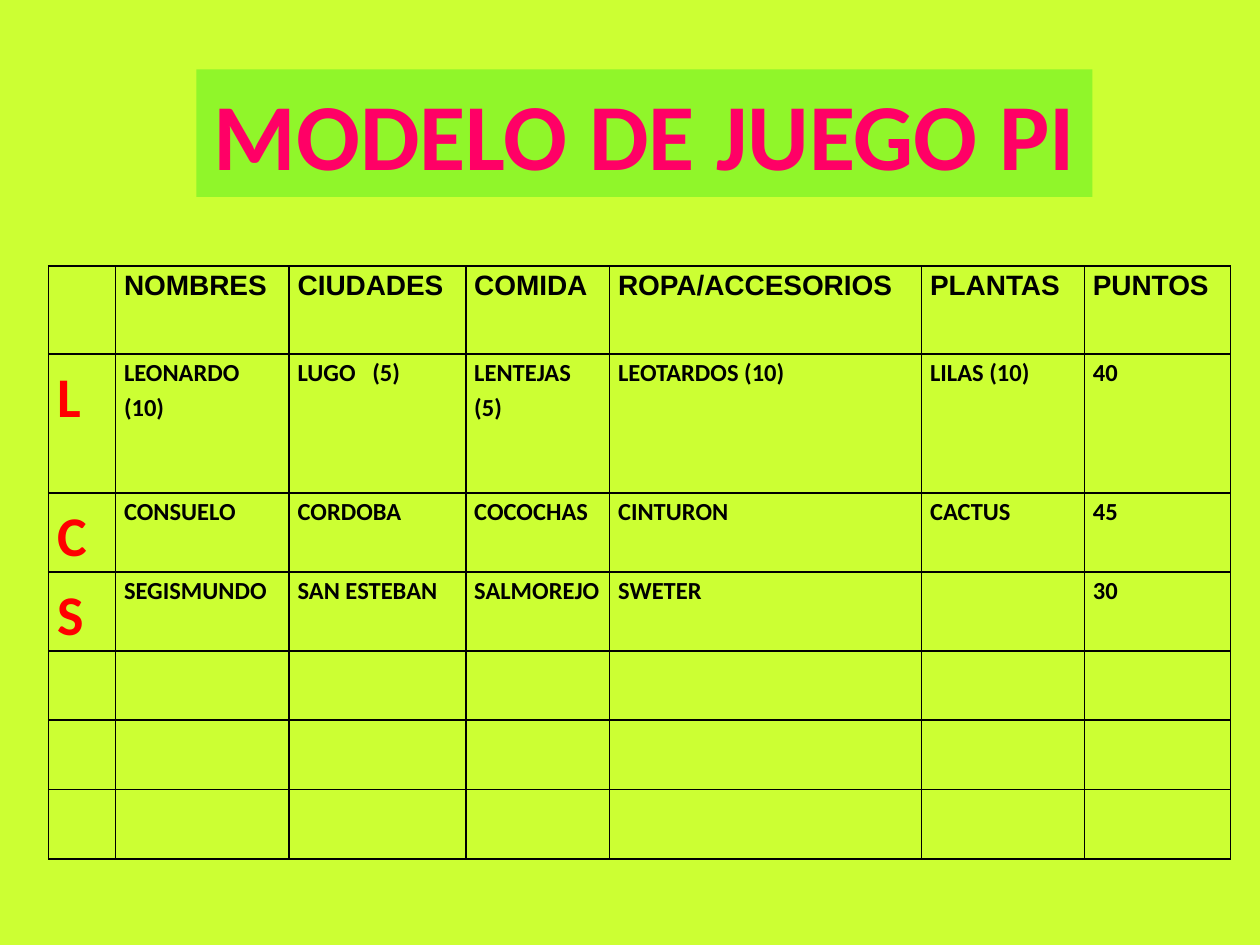
from pptx import Presentation
from pptx import util as u
from pptx.dml import color as colors
from pptx.enum import text
from pptx.oxml import parse_xml
from pptx.oxml.ns import nsdecls

LIME, GREEN, PINK, RED, BLACK = "CCFF33", "90F62A", "FF0066", "FF0000", "000000"

HEADINGS = ["", "NOMBRES", "CIUDADES", "COMIDA", "ROPA/ACCESORIOS", "PLANTAS", "PUNTOS"]
ROUNDS = [
    ["L", "LEONARDO (10)", "LUGO   (5)", "LENTEJAS (5)", "LEOTARDOS (10)", "LILAS (10)", "40"],
    ["C", "CONSUELO", "CORDOBA", "COCOCHAS", "CINTURON", "CACTUS", "45"],
    ["S", "SEGISMUNDO", "SAN ESTEBAN", "SALMOREJO", "SWETER", "", "30"],
]
BLANK_ROUNDS = [[""] * len(HEADINGS)] * 3
COLUMN_WIDTHS = [1.35, 3.5, 3.56, 2.9, 6.29, 3.28, 2.95]
ROW_HEIGHTS = [1.78, 2.8] + [1.59] * 2 + [1.4] * 3


def paint(color_format, color):
    color_format.rgb = colors.RGBColor.from_string(color)


def format_runs(paragraph, font, size, color):
    for run in paragraph.runs:
        run.font.name = font
        run.font.size = u.Pt(size)
        run.font.bold = True
        paint(run.font.color, color)


def add_borders(cell, color=BLACK, width=1):
    properties = cell._tc.get_or_add_tcPr()
    for index, side in enumerate("LRTB"):
        properties.insert(index, parse_xml(
            f'<a:ln{side} {nsdecls("a")} w="{u.Pt(width)}"><a:solidFill>'
            f'<a:srgbClr val="{color}"/></a:solidFill></a:ln{side}>'))


def place_title(slide, left, top, width, height):
    title = slide.shapes.title
    title.left, title.top, title.width, title.height = map(u.Cm, (left, top, width, height))
    title.fill.solid()
    paint(title.fill.fore_color, GREEN)
    frame = title.text_frame
    frame.text = "MODELO DE JUEGO PI"
    frame.word_wrap = False
    frame.auto_size = text.MSO_AUTO_SIZE.SHAPE_TO_FIT_TEXT
    frame.paragraphs[0].alignment = text.PP_ALIGN.CENTER
    format_runs(frame.paragraphs[0], "Calibri", 54, PINK)


def fill_cell(cell, content, font, size, color):
    cell.fill.background()
    add_borders(cell)
    cell.margin_left = cell.margin_right = u.Cm(0.17)
    cell.margin_top = cell.margin_bottom = 0
    cell.text_frame.text = content
    paragraph = cell.text_frame.paragraphs[0]
    paragraph.line_spacing = 1.15
    format_runs(paragraph, font, size, color)


def place_game_table(slide, left, top):
    rows = [HEADINGS] + ROUNDS + BLANK_ROUNDS
    game = slide.shapes.add_table(
        len(rows), len(HEADINGS), u.Cm(left), u.Cm(top),
        u.Cm(sum(COLUMN_WIDTHS)), u.Cm(sum(ROW_HEIGHTS))).table
    game.first_row = game.horz_banding = False
    for column, width in zip(game.columns, COLUMN_WIDTHS):
        column.width = u.Cm(width)
    for r, (row, height) in enumerate(zip(rows, ROW_HEIGHTS)):
        game.rows[r].height = u.Cm(height)
        for c, content in enumerate(row):
            if r == 0:
                style = ("Arial", 16, BLACK)
            elif c == 0:
                style = ("Calibri", 32, RED)
            else:
                style = ("Calibri", 14, BLACK)
            fill_cell(game.cell(r, c), content, *style)


def main():
    deck = Presentation()
    deck.slide_width, deck.slide_height = u.Cm(25.4), u.Cm(19.05)
    slide = deck.slides.add_slide(deck.slide_layouts[5])
    slide.background.fill.solid()
    paint(slide.background.fill.fore_color, LIME)
    place_game_table(slide, 0.98, 5.36)
    place_title(slide, 3.96, 1.4, 18.06, 2.57)
    deck.save("out.pptx")


if __name__ == "__main__":
    main()
